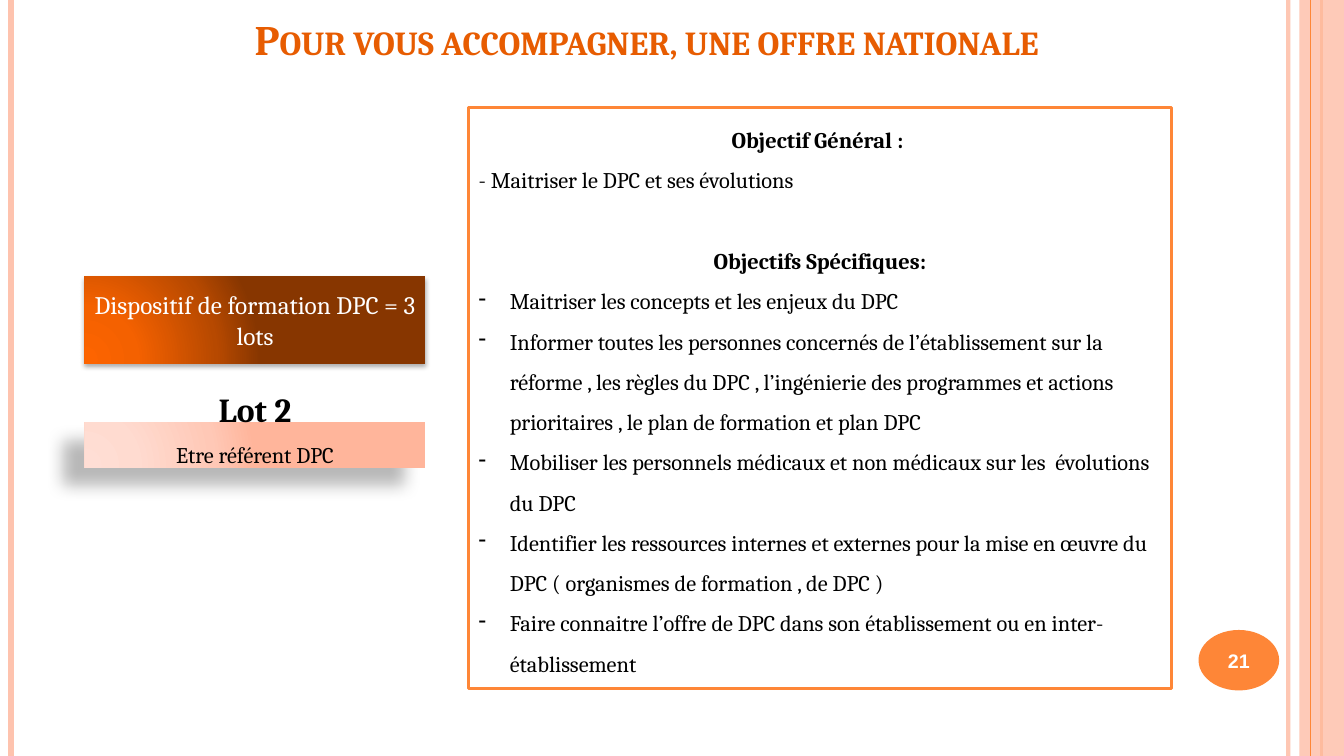
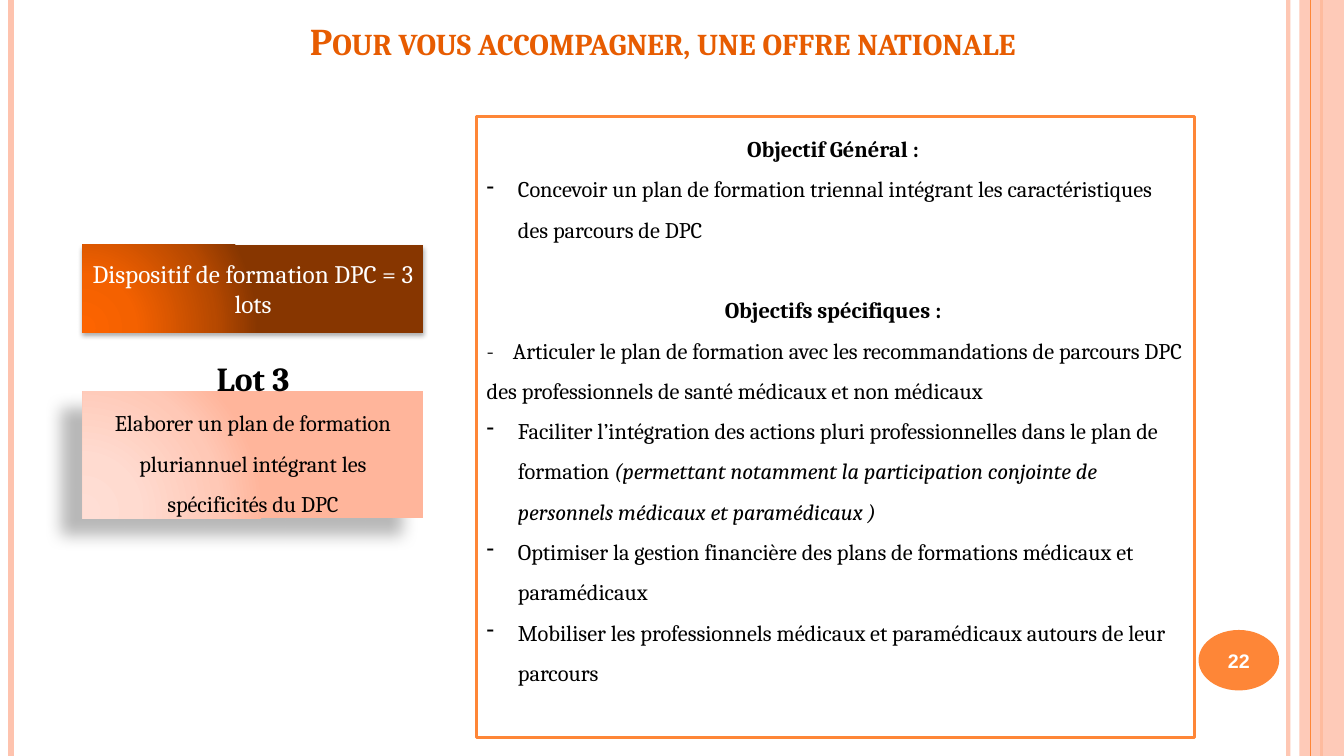
from lxml.etree import SubElement
from pptx import Presentation
from pptx.dml.color import RGBColor
from pptx.enum.shapes import MSO_CONNECTOR as Connector, MSO_SHAPE as Preset
from pptx.enum.text import MSO_ANCHOR as Anchor, PP_ALIGN as Align
from pptx.oxml.ns import qn
from pptx.util import Inches, Pt

COLUMNS, ROWS = 133.33, 75
CELL = Inches(0.1)
FONT = "Cambria"
COLORS = {
    "pale": "FEC3AE", "orange": "FE8637", "title": "E75C01",
    "white": "FFFFFF", "black": "000000",
}
GRADIENTS = {
    "theme": ["FFDED5", "FFDBD0", "FFC8B6", "FFB59B"],
    "program": ["FD6400", "F46100", "B74900", "873600"],
}
STOPS = [0, 30, 75, 100]
FOCUS = {"l": 5, "t": 100, "r": 120, "b": 10}
SHADOWS = {
    "theme": {"alpha": 28, "blur": 11.8, "distance": 19.7, "angle": 141},
    "program": {"alpha": 32, "blur": 3.5, "distance": 2.2, "angle": 90},
}

TITLE = "Pour vous accompagner, une offre nationale"
PROGRAM = "Dispositif de formation DPC = 3 lots"
LEFT_WIDTH, PROGRAM_HEIGHT = 33.8, 8.7
LOT_DROP, THEME_DROP = 10.7, 14.5
LOT_SIZE = (11.9, 5)
BULLET_INDENT = Inches(0.31)
TAB_STOP = Inches(0.26)
SECTION_GAP = Pt(28.8)

SLIDES = [
    {
        "number": "21", "title_left": 9.7, "title_size": 30,
        "lot": "Lot 2", "theme": "Etre référent DPC",
        "left": 8.4, "top": 27.4, "theme_height": 4.5,
        "panel": (46.5, 10.7, 69.7, 57.6),
        "objectives": [
            ("heading", "Objectif Général : "),
            ("plain", "- Maitriser le DPC et ses évolutions"),
            ("section", "Objectifs Spécifiques:"),
            ("bullet", "Maitriser les concepts et les enjeux du DPC"),
            ("bullet", "Informer toutes les personnes concernés de l’établissement sur la "
                       "réforme , les règles du DPC , l’ingénierie des programmes et actions "
                       "prioritaires , le plan de formation et plan DPC"),
            ("bullet", "Mobiliser les personnels médicaux et non médicaux sur les  évolutions du DPC"),
            ("bullet", "Identifier les ressources internes et externes pour la mise en œuvre "
                       "du DPC ( organismes de formation , de DPC )"),
            ("bullet", "Faire connaitre l’offre de DPC dans son établissement ou en "
                       "inter- établissement"),
        ],
    },
    {
        "number": "22", "title_left": 11.3, "title_size": 27,
        "lot": "Lot 3",
        "theme": "Elaborer un plan de formation pluriannuel intégrant les spécificités du DPC",
        "left": 8.2, "top": 24.3, "theme_height": 12.6,
        "panel": (47.3, 11.6, 71.2, 61.6),
        "objectives": [
            ("heading", "Objectif Général : "),
            ("bullet", "Concevoir un plan de formation triennal intégrant les "
                       "caractéristiques des parcours de DPC"),
            ("section", "Objectifs spécifiques : "),
            ("plain", "-\tArticuler le plan de formation avec les recommandations de parcours "
                      "DPC des professionnels de santé médicaux et non médicaux"),
            ("bullet", "Faciliter l’intégration des actions pluri professionnelles dans le "
                       "plan de formation",
             " (permettant notamment la participation conjointe de personnels médicaux "
             "et paramédicaux )"),
            ("bullet", "Optimiser la gestion financière des plans de formations médicaux "
                       "et paramédicaux"),
            ("bullet", "Mobiliser les professionnels médicaux et paramédicaux autours de "
                       "leur parcours"),
        ],
    },
]


def cells(*values):
    return [round(value * CELL) for value in values]


def rgb(name):
    return RGBColor.from_string(COLORS[name])


def set_alpha(parent, percent):
    for color in list(parent.iter(qn("a:srgbClr"))):
        SubElement(color, qn("a:alpha"), val=str(percent * 1000))


def add_rule(slide, column, color, weight, alpha=None):
    rule = slide.shapes.add_connector(
        Connector.STRAIGHT, *cells(column, 0, column, ROWS))
    rule.line.color.rgb = rgb(color)
    rule.line.width = Pt(weight)
    properties = rule._element.spPr
    if alpha:
        set_alpha(properties, alpha)
    SubElement(properties, qn("a:effectLst"))


def add_block(slide, box, fill=None, line=None, preset=Preset.RECTANGLE, anchor=Anchor.TOP):
    shape = slide.shapes.add_shape(preset, *cells(*box))
    shape.shadow.inherit = False
    if fill:
        shape.fill.solid()
        shape.fill.fore_color.rgb = rgb(fill)
    else:
        shape.fill.background()
    if line:
        shape.line.color.rgb = rgb(line)
        shape.line.width = Pt(2)
    else:
        shape.line.fill.background()
    shape.text_frame.word_wrap = True
    shape.text_frame.vertical_anchor = anchor
    return shape


def add_label(slide, box, anchor=Anchor.TOP):
    label = slide.shapes.add_textbox(*cells(*box))
    label.text_frame.word_wrap = True
    label.text_frame.vertical_anchor = anchor
    return label


def add_run(paragraph, text, size, color="black", bold=False, italic=False, font=FONT):
    run = paragraph.add_run()
    run.text = text
    run.font.name = font
    run.font.size = Pt(size)
    run.font.bold = bold
    run.font.italic = italic
    run.font.color.rgb = rgb(color)
    return run


def write_line(shape, text, size, spacing=None, **style):
    paragraph = shape.text_frame.paragraphs[0]
    paragraph.alignment = Align.CENTER
    if spacing:
        paragraph.line_spacing = spacing
    return add_run(paragraph, text, size, **style)


def apply_glow(shape, kind):
    properties = shape._element.spPr
    gradient = properties.makeelement(qn("a:gradFill"), {"rotWithShape": "1"})
    stops = SubElement(gradient, qn("a:gsLst"))
    for position, color in zip(STOPS, GRADIENTS[kind]):
        stop = SubElement(stops, qn("a:gs"), pos=str(position * 1000))
        SubElement(stop, qn("a:srgbClr"), val=color)
    circle = SubElement(gradient, qn("a:path"), {"path": "circle"})
    SubElement(circle, qn("a:fillToRect"),
               {side: str(share * 1000) for side, share in FOCUS.items()})
    properties.replace(properties.find(qn("a:noFill")), gradient)
    shadow = SHADOWS[kind]
    outer = SubElement(
        properties.find(qn("a:effectLst")), qn("a:outerShdw"),
        blurRad=str(Pt(shadow["blur"])), dist=str(Pt(shadow["distance"])),
        dir=str(shadow["angle"] * 60000), algn="ctr", rotWithShape="0")
    SubElement(outer, qn("a:srgbClr"), val=COLORS["black"])
    set_alpha(outer, shadow["alpha"])


def add_frame(slide, number):
    add_rule(slide, 127.8, "pale", 3, 93)
    add_rule(slide, 1.1, "pale", 4.5)
    add_rule(slide, 131.1, "orange", 1.5)
    band = add_block(slide, (128.9, 0, COLUMNS - 128.9, ROWS), "pale")
    set_alpha(band._element.spPr, 87)
    add_rule(slide, 130, "orange", 0.75)
    badge = add_block(slide, (118.9, 62.5, 8, 6), "orange",
                      preset=Preset.OVAL, anchor=Anchor.MIDDLE)
    write_line(badge, number, 14, color="white", bold=True, font="Arial")


def add_title(slide, left, size):
    title = add_label(slide, (left, 1.1, 108.9, 5.7), Anchor.BOTTOM)
    run = write_line(title, TITLE, size, color="title", bold=True)
    run.font._element.set("cap", "small")


def add_lot(slide, content):
    left, top = content["left"], content["top"]
    theme = add_block(slide, (left, top + THEME_DROP, LEFT_WIDTH, content["theme_height"]))
    apply_glow(theme, "theme")
    write_line(theme, content["theme"], 16, spacing=1.5)
    lot_left = left + (LEFT_WIDTH - LOT_SIZE[0]) / 2
    lot = add_label(slide, (lot_left, top + LOT_DROP, *LOT_SIZE))
    write_line(lot, content["lot"], 24, bold=True)
    program = add_block(slide, (left, top, LEFT_WIDTH, PROGRAM_HEIGHT), anchor=Anchor.MIDDLE)
    apply_glow(program, "program")
    write_line(program, PROGRAM, 18, color="white")


def add_objectives(slide, box, objectives):
    frame = add_block(slide, box, "white", "orange").text_frame
    for index, (kind, text, *aside) in enumerate(objectives):
        paragraph = frame.add_paragraph() if index else frame.paragraphs[0]
        heading = kind in ("heading", "section")
        paragraph.alignment = Align.CENTER if heading else Align.LEFT
        paragraph.line_spacing = 1.5
        if kind == "section":
            paragraph.space_before = SECTION_GAP
        properties = paragraph._p.get_or_add_pPr()
        if kind == "bullet":
            properties.set("marL", str(BULLET_INDENT))
            properties.set("indent", str(-BULLET_INDENT))
            SubElement(properties, qn("a:buChar"), char="-")
        if "\t" in text:
            tabs = SubElement(properties, qn("a:tabLst"))
            SubElement(tabs, qn("a:tab"), pos=str(TAB_STOP), algn="l")
        add_run(paragraph, text, 16, bold=heading)
        for remark in aside:
            add_run(paragraph, remark, 16, italic=True)


def main():
    presentation = Presentation()
    presentation.slide_width, presentation.slide_height = cells(COLUMNS, ROWS)
    for content in SLIDES:
        slide = presentation.slides.add_slide(presentation.slide_layouts[6])
        add_frame(slide, content["number"])
        add_title(slide, content["title_left"], content["title_size"])
        add_lot(slide, content)
        add_objectives(slide, content["panel"], content["objectives"])
    presentation.save("out.pptx")


if __name__ == "__main__":
    main()
